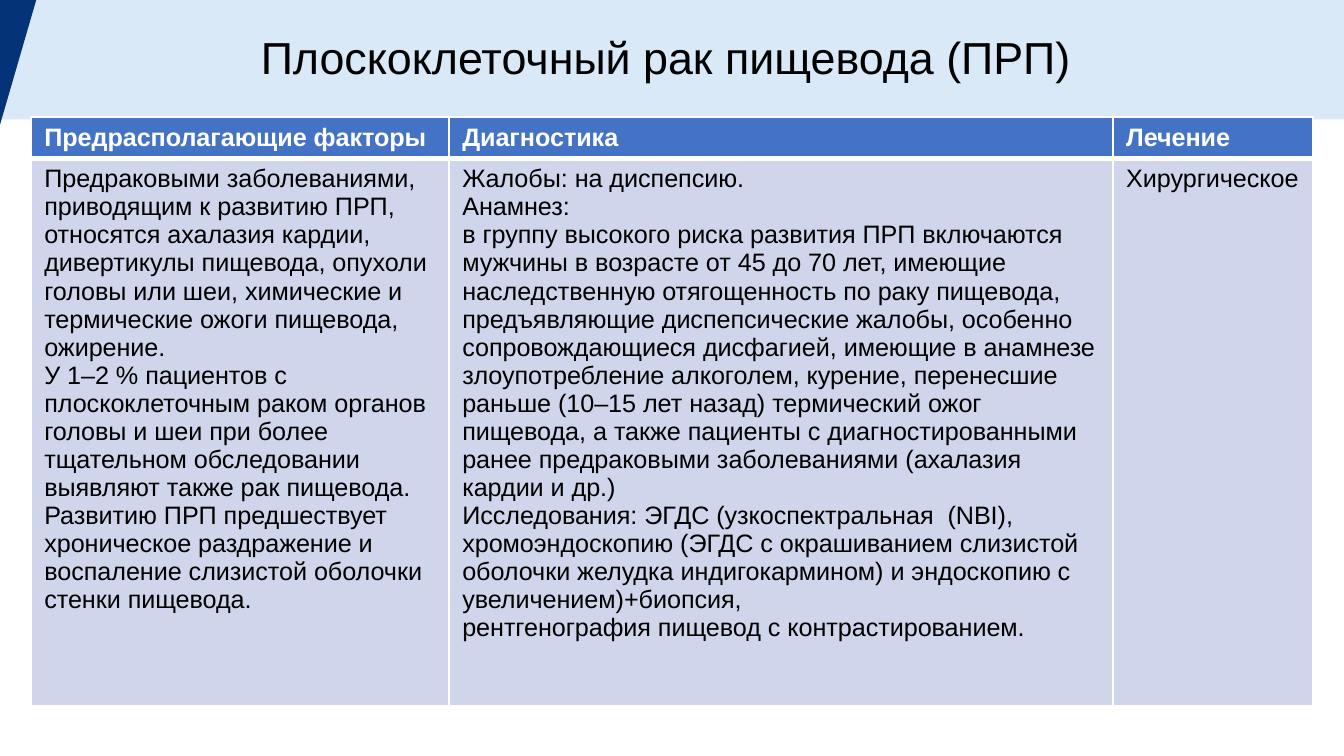
import pptx
import pptx.dml.color
import pptx.enum.shapes
import pptx.enum.text
import pptx.oxml.ns
import pptx.util
from lxml import etree
from pptx.util import Inches

COLORS = {
    "band": "D9E9F7",
    "wedge": "043377",
    "header": "4472C4",
    "body": "CFD5EA",
    "white": "FFFFFF",
    "black": "000000",
}
FONT = "Arial"
TITLE = "Плоскоклеточный рак пищевода (ПРП) "
COLUMNS = [
    ("Предрасполагающие факторы", 3.11, [
        "Предраковыми заболеваниями, приводящим к развитию ПРП, относятся ахалазия кардии, "
        "дивертикулы пищевода, опухоли головы или шеи, химические и термические ожоги пищевода, "
        "ожирение.",
        "У 1–2 % пациентов с плоскоклеточным раком органов головы и шеи при более тщательном "
        "обследовании выявляют также рак пищевода. Развитию ПРП предшествует хроническое "
        "раздражение и воспаление слизистой оболочки стенки пищевода.",
    ]),
    ("Диагностика", 4.94, [
        "Жалобы: на диспепсию.",
        "Анамнез:",
        "в группу высокого риска развития ПРП включаются мужчины в возрасте от 45 до 70 лет, "
        "имеющие наследственную отягощенность по раку пищевода, предъявляющие диспепсические "
        "жалобы, особенно сопровождающиеся дисфагией, имеющие в анамнезе злоупотребление "
        "алкоголем, курение, перенесшие раньше (10–15 лет назад) термический ожог пищевода, "
        "а также пациенты с диагностированными ранее предраковыми заболеваниями "
        "(ахалазия кардии и др.)",
        "Исследования: ЭГДС (узкоспектральная  (NBI), хромоэндоскопию (ЭГДС с окрашиванием "
        "слизистой оболочки желудка индигокармином) и эндоскопию с увеличением)+биопсия,",
        "рентгенография пищевод с контрастированием.",
    ]),
    ("Лечение", 1.49, ["Хирургическое"]),
]
ROW_HEIGHTS = [0.3, 4.07]


def rgb(name):
    return pptx.dml.color.RGBColor.from_string(COLORS[name])


def paint(shape, color):
    shape.shadow.inherit = False
    shape.fill.solid()
    shape.fill.fore_color.rgb = rgb(color)
    shape.line.fill.background()


def style_text(frame, size, color, bold=False):
    for para in frame.paragraphs:
        for span in para.runs:
            span.font.name = FONT
            span.font.size = pptx.util.Pt(size)
            span.font.bold = bold
            span.font.color.rgb = rgb(color)


def add_borders(cell, widths):
    properties = cell._tc.get_or_add_tcPr()
    for side, width in widths.items():
        line = etree.SubElement(properties, pptx.oxml.ns.qn(f"a:ln{side}"), w=str(pptx.util.Pt(width)))
        fill = etree.SubElement(line, pptx.oxml.ns.qn("a:solidFill"))
        etree.SubElement(fill, pptx.oxml.ns.qn("a:srgbClr"), val=COLORS["white"])


def fill_cell(cell, lines, background, text_color, bold, borders):
    cell.margin_left = cell.margin_right = Inches(0.1)
    cell.margin_top = cell.margin_bottom = Inches(0.05)
    cell.text_frame.text = "\n".join(lines)
    style_text(cell.text_frame, 13.5, text_color, bold)
    add_borders(cell, borders)
    cell.fill.solid()
    cell.fill.fore_color.rgb = rgb(background)


def add_title(page):
    band = page.shapes.add_shape(
        pptx.enum.shapes.MSO_SHAPE.RECTANGLE, 0, Inches(-0.04), Inches(10), Inches(0.93))
    paint(band, "band")
    frame = band.text_frame
    frame.text = TITLE
    frame.word_wrap = True
    frame.vertical_anchor = pptx.enum.text.MSO_ANCHOR.MIDDLE
    frame.paragraphs[0].alignment = pptx.enum.text.PP_ALIGN.CENTER
    style_text(frame, 24, "black")

    outline = page.shapes.build_freeform(0, 0)
    outline.add_line_segments([(Inches(0.27), 0), (0, Inches(0.93))], close=True)
    paint(outline.convert_to_shape(), "wedge")


def add_factors_table(page):
    widths = [width for _, width, _ in COLUMNS]
    table = page.shapes.add_table(
        len(ROW_HEIGHTS), len(COLUMNS), Inches(0.23), Inches(0.87),
        Inches(sum(widths)), Inches(sum(ROW_HEIGHTS))).table
    for row, height in zip(table.rows, ROW_HEIGHTS):
        row.height = Inches(height)
    for index, (heading, width, lines) in enumerate(COLUMNS):
        table.columns[index].width = Inches(width)
        fill_cell(table.cell(0, index), [heading], "header", "white", True,
                  {"L": 1, "R": 1, "T": 1, "B": 3})
        fill_cell(table.cell(1, index), lines, "body", "black", False,
                  {"L": 1, "R": 1, "T": 3, "B": 1})


def main():
    deck = pptx.Presentation()
    deck.slide_width = Inches(10)
    deck.slide_height = deck.slide_width * 9 // 16
    page = deck.slides.add_slide(deck.slide_layouts[6])
    add_title(page)
    add_factors_table(page)
    deck.save("out.pptx")


if __name__ == "__main__":
    main()
